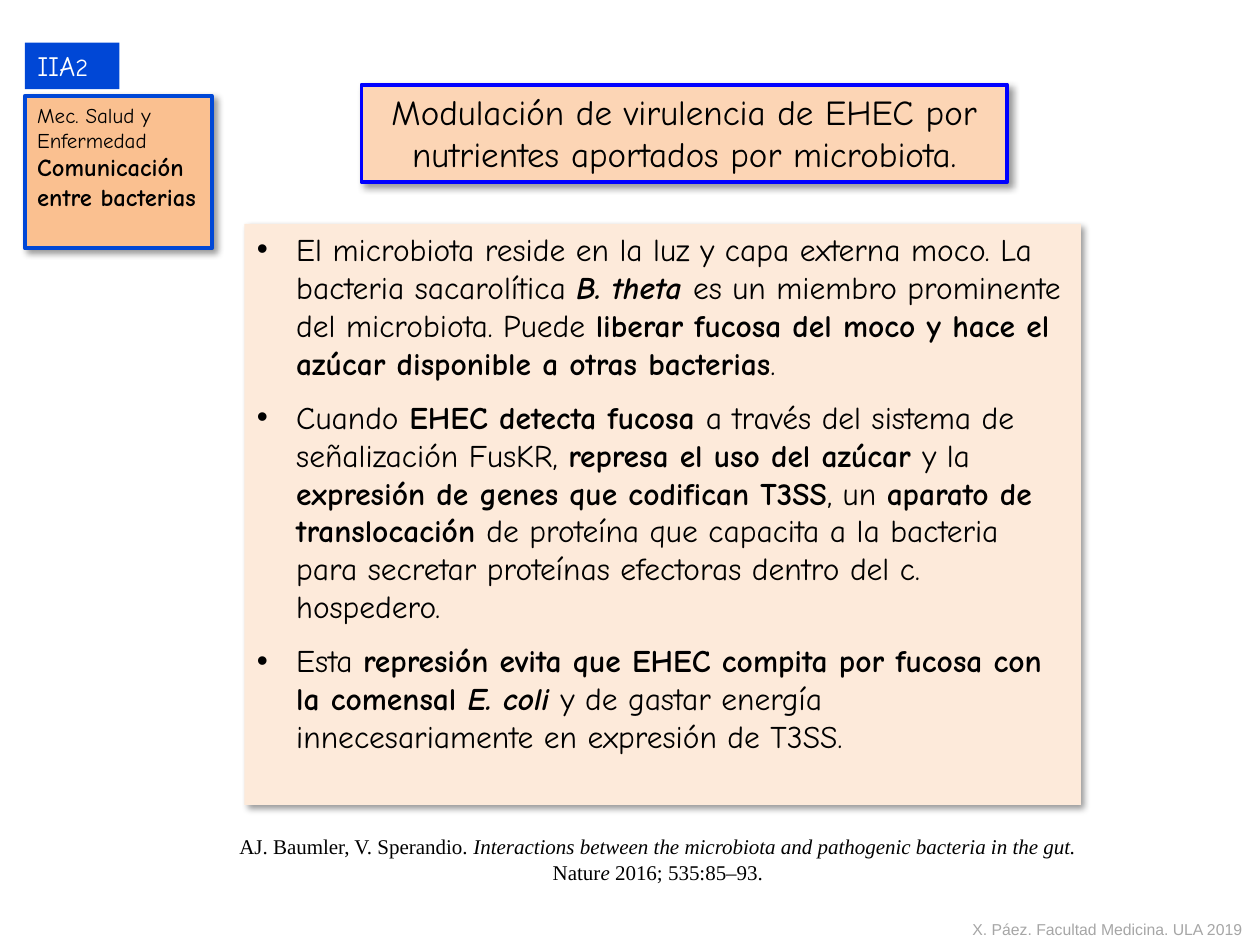
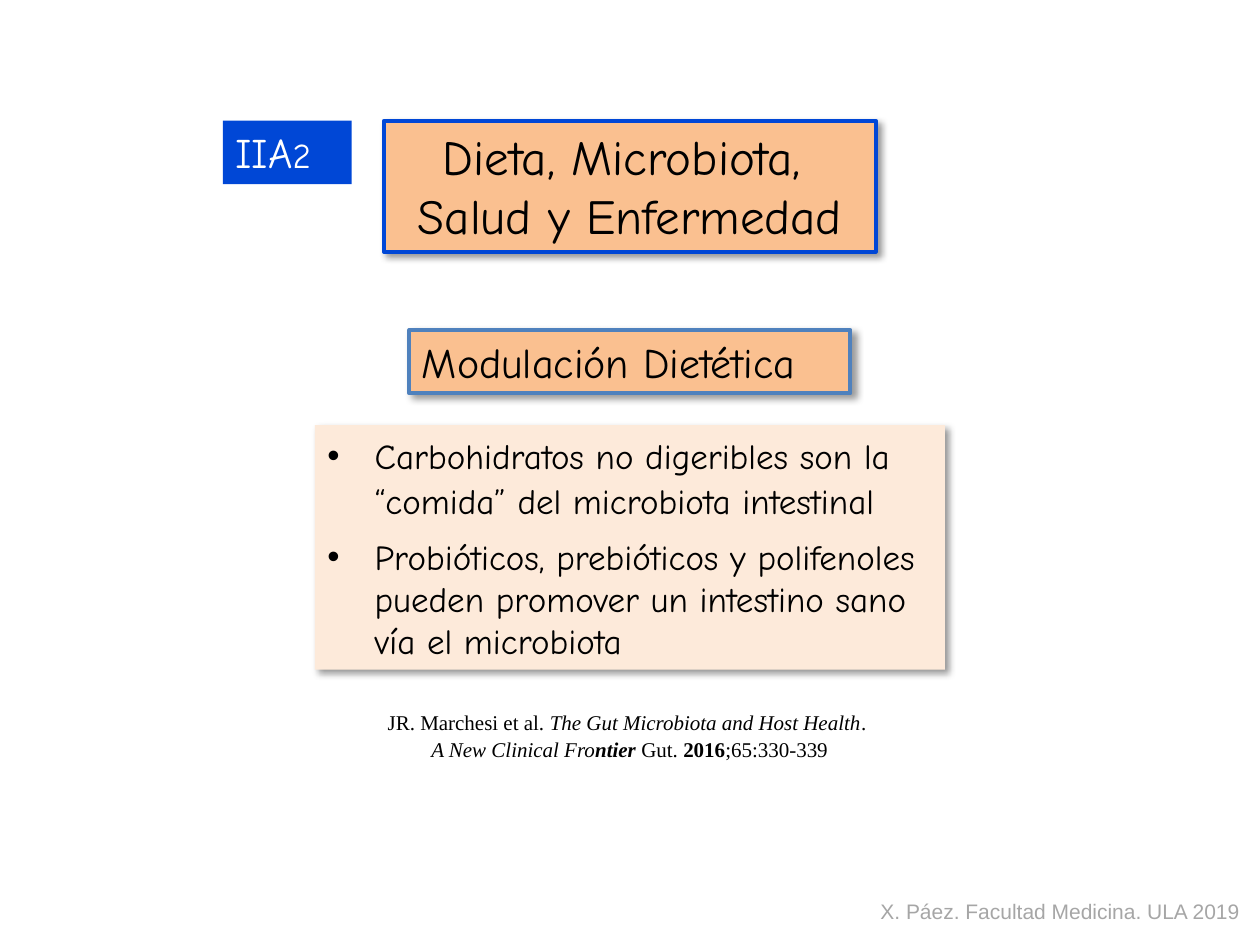
from dataclasses import dataclass

from lxml.etree import SubElement
from pptx import Presentation
from pptx.dml.color import RGBColor
from pptx.enum.shapes import MSO_SHAPE as Preset
from pptx.enum.text import MSO_ANCHOR as Anchor, MSO_AUTO_SIZE as AutoSize, PP_ALIGN as Align
from pptx.oxml.ns import qn
from pptx.util import Pt


@dataclass(frozen=True)
class Theme:
    """Colours, fonts and type sizes shared by the slides."""

    ink: str = "000000"
    paper: str = "FFFFFF"
    blue: str = "0047D6"
    pure_blue: str = "0000FF"
    steel: str = "4F81BD"
    orange: str = "FAC090"
    peach: str = "FCD5B5"
    cream: str = "FDEADA"
    grey: str = "A6A6A6"
    hand: str = "Comic Neue"
    serif: str = "Times New Roman"
    sans: str = "Arial"
    small: int = 9
    note: int = 12
    label: int = 14
    code: int = 16
    body: int = 18
    title: int = 20
    section: int = 24
    cover: int = 28
    border: float = 2.25


class Deck:
    """Holds the theme and the current slide, and draws each kind of element."""

    def __init__(self, theme):
        """Start an empty presentation of 720 by 540 points."""
        self.theme = theme
        self.presentation = Presentation()
        self.presentation.slide_width, self.presentation.slide_height = Pt(720), Pt(540)
        self.slide = None

    def new_slide(self):
        """Add a blank slide and make it current."""
        self.slide = self.presentation.slides.add_slide(self.presentation.slide_layouts[6])

    def fill_text(self, frame, paragraphs, size, font, color, align=Align.LEFT):
        """Fill a frame; each paragraph is a list of (text, style, optional size) runs."""
        frame.word_wrap = True
        frame.vertical_anchor = Anchor.TOP
        for index, pieces in enumerate(paragraphs):
            paragraph = frame.paragraphs[0] if index == 0 else frame.add_paragraph()
            paragraph.alignment = align
            for text, style, *own_size in pieces:
                run = paragraph.add_run()
                run.text = text
                run.font.size = Pt(own_size[0] if own_size else size)
                run.font.name = font
                run.font.bold = "b" in style
                run.font.italic = "i" in style
                run.font.color.rgb = RGBColor.from_string(color)
        return frame.paragraphs

    def box(self, place, fill, line=None, shadow=True):
        """Draw a filled rectangle and return its text frame."""
        panel = self.slide.shapes.add_shape(Preset.RECTANGLE, *map(Pt, place))
        panel.shadow.inherit = False
        panel.fill.solid()
        panel.fill.fore_color.rgb = RGBColor.from_string(fill)
        if line:
            panel.line.color.rgb = RGBColor.from_string(line)
            panel.line.width = Pt(self.theme.border)
        else:
            panel.line.fill.background()
        if shadow:
            effects = panel._element.spPr.find(qn("a:effectLst"))
            outer = SubElement(effects, qn("a:outerShdw"), blurRad=str(Pt(4)), dist=str(Pt(3)),
                               dir=str(45 * 60000), algn="tl", rotWithShape="0")
            tint = SubElement(outer, qn("a:srgbClr"), val=self.theme.ink)
            SubElement(tint, qn("a:alpha"), val="40000")
        return panel.text_frame

    def heading(self, place, paragraphs, size, fill, line, align=Align.CENTER):
        """Draw a bordered box with handwritten text."""
        self.fill_text(self.box(place, fill, line), paragraphs, size,
                       self.theme.hand, self.theme.ink, align)

    def code(self, place, size, digit_size):
        """Draw the blue section code."""
        self.fill_text(self.box(place, self.theme.blue, shadow=False),
                       [[("IIA", ""), ("2", "", digit_size)]],
                       size, self.theme.hand, self.theme.paper)

    def bullets(self, place, paragraphs, size, indent, gap):
        """Draw a cream panel of bulleted paragraphs and return them."""
        items = self.fill_text(self.box(place, self.theme.cream), paragraphs, size,
                               self.theme.hand, self.theme.ink)
        for item in items:
            properties = item._p.get_or_add_pPr()
            properties.set("marL", str(Pt(indent)))
            properties.set("indent", str(-Pt(indent)))
            SubElement(properties, qn("a:buFont"), typeface=self.theme.sans)
            SubElement(properties, qn("a:buChar"), char="•")
        for item in items[:-1]:
            item.space_after = Pt(gap)
        return items

    def citation(self, place, paragraphs, spacing=1.0):
        """Add a centred reference."""
        frame = self.slide.shapes.add_textbox(*map(Pt, place)).text_frame
        for line in self.fill_text(frame, paragraphs, self.theme.note, self.theme.serif,
                                   self.theme.ink, Align.CENTER):
            line.line_spacing = spacing

    def footer(self, place, size):
        """Add the author line."""
        frame = self.slide.shapes.add_textbox(*map(Pt, place)).text_frame
        self.fill_text(frame, [[("X. Páez. Facultad Medicina. ULA 2019", "")]],
                       size, self.theme.sans, self.theme.grey)
        frame.word_wrap = False
        frame.auto_size = AutoSize.SHAPE_TO_FIT_TEXT


def virulence_slide(deck):
    """Build the slide on how nutrients modulate EHEC virulence."""
    theme = deck.theme
    deck.new_slide()
    deck.bullets((139.7, 128, 478, 332), [
        [("El microbiota reside en la luz y capa externa moco. La bacteria sacarolítica ", ""),
         ("B. theta ", "bi"),
         ("es un miembro prominente del microbiota. Puede ", ""),
         ("liberar fucosa del moco y hace el azúcar disponible a otras bacterias", "b"),
         (".", "")],
        [("Cuando ", ""),
         ("EHEC detecta fucosa ", "b"),
         ("a través del sistema de señalización FusKR, ", ""),
         ("represa el uso del azúcar ", "b"),
         ("y la ", ""),
         ("expresión de genes que codifican T3SS", "b"),
         (", un ", ""),
         ("aparato de translocación ", "b"),
         ("de proteína que capacita a la bacteria para secretar proteínas efectoras "
          "dentro del c. hospedero.", "")],
        [("Esta ", ""),
         ("represión evita que EHEC compita por fucosa con la comensal ", "b"),
         ("E. coli ", "bi"),
         ("y de gastar energía innecesariamente en expresión de T3SS.", "")],
    ], theme.body, indent=22.5, gap=9.5)
    deck.citation((118, 473, 516, 36), [
        [("AJ. Baumler, V. Sperandio. ", ""),
         ("Interactions between the microbiota and pathogenic bacteria in the gut. ", "i"),
         ("Natur", ""), ("e", "i"), (" 2016; 535:85–93.", "")]])
    deck.footer((548.6, 522, 170.6, 18), theme.small)
    deck.heading((206.6, 48.4, 369, 55.6),
                 [[("Modulación de virulencia de EHEC por nutrientes aportados por microbiota.", "")]],
                 theme.title, theme.peach, theme.pure_blue)
    deck.heading((14.2, 54.8, 106.8, 87.2),
                 [[("Mec. Salud y", "")],
                  [("Enfermedad", "")],
                  [("Comunicación entre bacterias", "b", theme.label)]],
                 theme.note, theme.orange, theme.blue, Align.LEFT)
    deck.code((14.2, 24.4, 54, 26.6), theme.code, theme.label)


def diet_slide(deck):
    """Build the slide that opens the dietary modulation section."""
    theme = deck.theme
    deck.new_slide()
    first, _ = deck.bullets((180, 243, 360, 139.7), [
        [("Carbohidratos no digeribles son la “comida” del microbiota intestinal", "")],
        [("Probióticos, prebióticos y polifenoles pueden promover un intestino sano "
          "vía el microbiota", "")],
    ], theme.title, indent=27, gap=8)
    first.line_spacing = 1.07
    deck.heading((234, 188.5, 252, 36.3), [[("Modulación Dietética", "")]],
                 theme.section, theme.orange, theme.steel, Align.LEFT)
    deck.citation((212.6, 401, 294.4, 38), [
        [("JR. Marchesi et al. ", ""), ("The Gut Microbiota and Host Health", "i"), (". ", "")],
        [("A New Clinical Fro", "i"), ("ntier ", "bi"), ("Gut. ", ""),
         ("2016", "b"), (";65:330-339", "")],
    ], spacing=1.07)
    deck.footer((496, 510, 221.8, 21.6), theme.note)
    deck.heading((219.4, 69, 281, 75),
                 [[("Dieta, Microbiota, ", "")], [("Salud y Enfermedad", "")]],
                 theme.cover, theme.orange, theme.blue)
    deck.code((127.4, 69, 73.5, 36.3), theme.section, theme.title)


def main():
    """Build both slides and save them."""
    deck = Deck(Theme())
    virulence_slide(deck)
    diet_slide(deck)
    deck.presentation.save("out.pptx")


if __name__ == "__main__":
    main()
